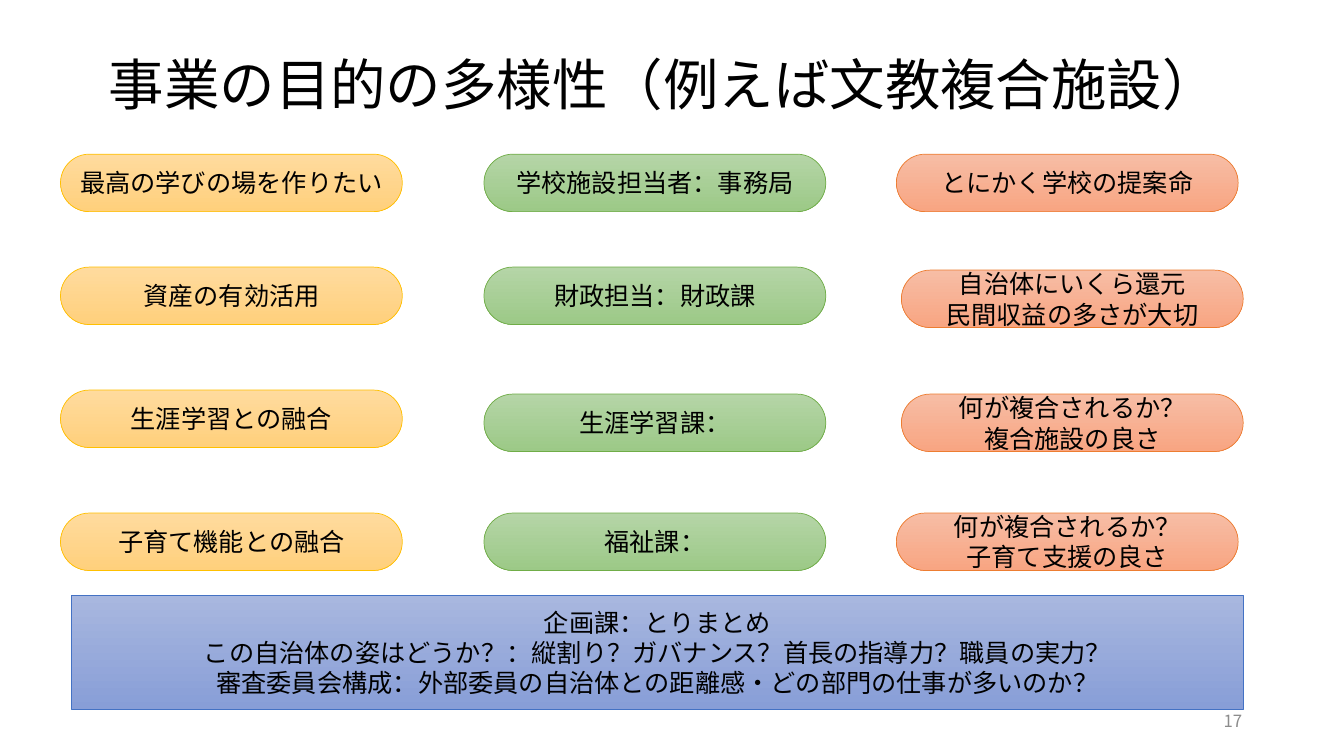
from lxml import etree
from pptx import Presentation
from pptx import util as u
from pptx.dml.color import RGBColor
from pptx.enum import shapes, text
from pptx.oxml.ns import qn

TITLE = "事業の目的の多様性（例えば文教複合施設）"
PAGE = "17"
# One row per aim: the aim, the office in charge, what it cares about
ROWS = [
    ("最高の学びの場を作りたい", "学校施設担当者：事務局", "とにかく学校の提案命"),
    ("資産の有効活用", "財政担当：財政課", "自治体にいくら還元\n民間収益の多さが大切"),
    ("生涯学習との融合", "生涯学習課：", "何が複合されるか？\n複合施設の良さ"),
    ("子育て機能との融合", "福祉課：", "何が複合されるか？\n子育て支援の良さ"),
]
SUMMARY = (
    "企画課：とりまとめ\n"
    "この自治体の姿はどうか？：縦割り？ガバナンス？首長の指導力？職員の実力？\n"
    "審査委員会構成：外部委員の自治体との距離感・どの部門の仕事が多いのか？"
)

THEME = {
    "font": "Noto Sans CJK JP",
    "title": 39.6, "body": 18, "page": 12,
    "ink": "000000", "grey": "8C8C8C",
    # gradient top, gradient bottom, outline
    "gold": ("FFDB9E", "FFD07C", "FFC000"),
    "green": ("B5D5A7", "9CC987", "70AD47"),
    "orange": ("F7BDA5", "F8A582", "ED7D31"),
    "blue": ("A8B7DF", "889ED7", "4472C4"),
}
COLUMNS = [(0.6, "gold"), (4.8, "green"), (8.89, "orange")]
TOPS = [1.53, 2.65, 3.87, 5.09]
PILL = (3.39, 0.57)
# (row, column): offset from the grid
SHIFTS = {(1, 2): (0.05, 0.03), (2, 1): (0, 0.04), (2, 2): (0.05, 0.04)}


def write(shape, words, size, ink, align, spacing=None):
    frame = shape.text_frame
    frame.text = words
    frame.word_wrap = True
    frame.vertical_anchor = text.MSO_ANCHOR.MIDDLE
    for para in frame.paragraphs:
        para.alignment = align
        para.line_spacing = spacing
        for run in para.runs:
            font = run.font
            font.size = u.Pt(size)
            font.color.rgb = RGBColor.from_string(ink)
            font.name = THEME["font"]
            east = etree.SubElement(run._r.get_or_add_rPr(), qn("a:ea"))
            east.set("typeface", THEME["font"])


def label(slide, box, words, size, ink, align, spacing=None):
    shape = slide.shapes.add_textbox(*map(u.Inches, box))
    write(shape, words, size, ink, align, spacing)


def panel(slide, kind, box, words, hue):
    """Add a gradient shape with centred text."""
    top, bottom, edge = map(RGBColor.from_string, THEME[hue])
    shape = slide.shapes.add_shape(kind, *map(u.Inches, box))
    shape.shadow.inherit = False
    shape.fill.gradient()
    shape.fill.gradient_angle = 270
    for stop, shade in zip(shape.fill.gradient_stops, (top, bottom)):
        stop.color.rgb = shade
    shape.line.color.rgb = edge
    shape.line.width = u.Pt(0.5)
    write(shape, words, THEME["body"], THEME["ink"], text.PP_ALIGN.CENTER)
    return shape


def main():
    deck = Presentation()
    deck.slide_width, deck.slide_height = u.Inches(13.33), u.Inches(7.5)
    slide = deck.slides.add_slide(deck.slide_layouts[6])

    label(slide, (0.98, 0.62, 11.43, 0.5), TITLE, THEME["title"],
          THEME["ink"], text.PP_ALIGN.LEFT, 0.9)
    label(slide, (9.42, 6.95, 3, 0.4), PAGE, THEME["page"],
          THEME["grey"], text.PP_ALIGN.RIGHT)

    for row, (top, cells) in enumerate(zip(TOPS, ROWS)):
        for col, ((left, hue), words) in enumerate(zip(COLUMNS, cells)):
            right, down = SHIFTS.get((row, col), (0, 0))
            pill = panel(slide, shapes.MSO_SHAPE.ROUNDED_RECTANGLE,
                         (left + right, top + down, *PILL), words, hue)
            pill.adjustments[0] = 0.5

    panel(slide, shapes.MSO_SHAPE.RECTANGLE, (0.71, 5.91, 11.62, 1.13),
          SUMMARY, "blue")
    deck.save("out.pptx")


if __name__ == "__main__":
    main()
